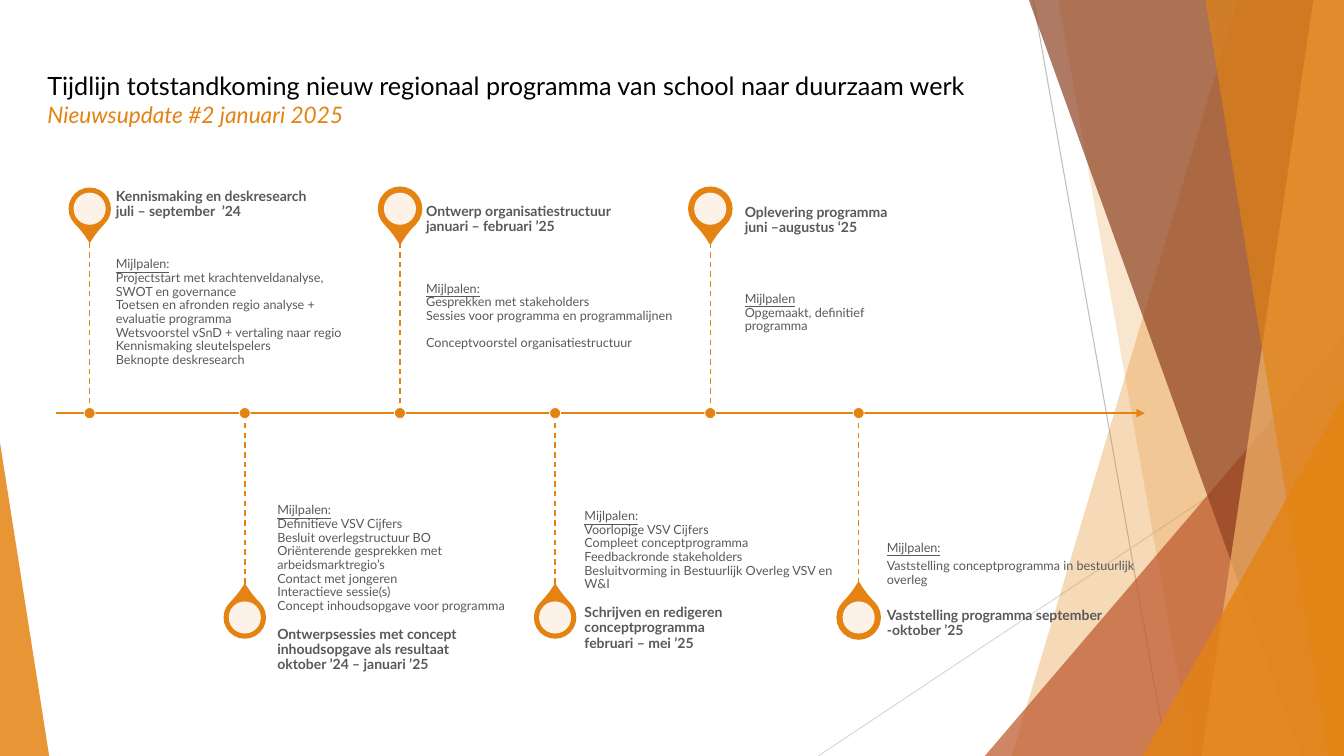
from dataclasses import dataclass

from lxml.etree import SubElement
from pptx import Presentation
from pptx.dml.color import RGBColor
from pptx.enum.dml import MSO_LINE
from pptx.enum.shapes import MSO_CONNECTOR, MSO_SHAPE
from pptx.enum.text import MSO_ANCHOR, PP_ALIGN
from pptx.oxml.ns import qn
from pptx.slide import Slide
from pptx.util import Cm, Pt

COLORS = {
    "orange": "E48312", "rust": "BD582C", "brown": "8E4221", "apricot": "F3B56C",
    "white": "FFFFFF", "black": "000000", "text": "595959",
    "gray": "BFBFBF", "light gray": "D9D9D9",
}
WIDTH, HEIGHT = 33.87, 19.05
AXIS_Y = 10.41
FIRST_X, STEP = 2.26, 3.91
STEM, PIN_OFFSET = 4.36, 5.15
HEADING_H, LIST_H, LIST_GAP = 1.55, 3.6, 0.15


def rgb(name):
    return RGBColor.from_string(COLORS[name])


@dataclass
class TimelineSlide:
    slide: Slide
    font: str = "Lato"

    def paint(self, shape, color, alpha=100, outline=None, weight=1.5):
        shape.shadow.inherit = False
        shape.fill.solid()
        shape.fill.fore_color.rgb = rgb(color)
        if alpha < 100:
            tint = shape.element.spPr.find(qn("a:solidFill"))[0]
            SubElement(tint, qn("a:alpha"), val=str(alpha * 1000))
        if outline:
            shape.line.color.rgb = rgb(outline)
            shape.line.width = Pt(weight)
        else:
            shape.line.fill.background()

    def shape(self, kind, left, top, width, height, color, adj=None, rotation=0, **look):
        figure = self.slide.shapes.add_shape(kind, Cm(left), Cm(top), Cm(width), Cm(height))
        if adj is not None:
            figure.adjustments[0] = adj
        figure.rotation = rotation
        self.paint(figure, color, **look)

    def centered(self, kind, x, y, size, color, **look):
        self.shape(kind, x - size / 2, y - size / 2, size, size, color, **look)

    def ribbon(self, top_x, bottom_x, color, alpha):
        """Fill the slide height from a slanted left edge to the right border."""
        outline = self.slide.shapes.build_freeform(Cm(top_x), 0)
        corners = [(WIDTH, 0), (WIDTH, HEIGHT), (bottom_x, HEIGHT)]
        outline.add_line_segments([(Cm(x), Cm(y)) for x, y in corners], close=True)
        self.paint(outline.convert_to_shape(), color, alpha)

    def line(self, start, end, color, weight, dashed=False, arrow=False):
        ends = [Cm(value) for value in (*start, *end)]
        stroke = self.slide.shapes.add_connector(MSO_CONNECTOR.STRAIGHT, *ends)
        stroke.line.color.rgb = rgb(color)
        stroke.line.width = Pt(weight)
        if dashed:
            stroke.line.dash_style = MSO_LINE.DASH
        properties = stroke.element.spPr
        if arrow:
            SubElement(properties.find(qn("a:ln")), qn("a:tailEnd"), type="triangle")
        SubElement(properties, qn("a:effectLst"))

    def styled_run(self, paragraph, text, size, color, bold=None, italic=None, underline=None):
        run = paragraph.add_run()
        run.text = text
        run.font.name = self.font
        run.font.size = Pt(size)
        run.font.color.rgb = rgb(color)
        run.font.bold, run.font.italic, run.font.underline = bold, italic, underline

    def title(self, heading, subtitle):
        title = self.slide.shapes.title
        title.left, title.top, title.width, title.height = Cm(0.94), Cm(1.65), Cm(25.15), Cm(2.1)
        frame = title.text_frame
        frame.word_wrap = True
        frame.vertical_anchor = MSO_ANCHOR.TOP
        self.styled_run(frame.paragraphs[0], heading, 18, "black")
        self.styled_run(frame.add_paragraph(), subtitle, 16.2, "orange", italic=True)
        for paragraph in frame.paragraphs:
            paragraph.alignment = PP_ALIGN.LEFT
            paragraph.space_before = Pt(0)

    def text(self, left, top, width, height, anchor, lines, size, right=0, bottom=0,
             underline_first=False, gaps=None, bold=None):
        """Add one paragraph per line; gaps maps a line index to its space before."""
        box = self.slide.shapes.add_textbox(Cm(left), Cm(top), Cm(width), Cm(height))
        frame = box.text_frame
        frame.word_wrap = True
        frame.vertical_anchor = anchor
        frame.margin_left = frame.margin_top = 0
        frame.margin_right, frame.margin_bottom = Cm(right), Cm(bottom)
        for index, line in enumerate(lines):
            paragraph = frame.add_paragraph() if index else frame.paragraphs[0]
            paragraph.line_spacing = 0.9
            paragraph.space_before = Pt((gaps or {}).get(index, 0))
            self.styled_run(paragraph, line, size, "text", bold=bold,
                            underline=underline_first and index == 0)

    def marker(self, x, above, outlined):
        side = -1 if above else 1
        pin_y = AXIS_Y + side * PIN_OFFSET
        self.centered(MSO_SHAPE.TEAR, x, pin_y, 1.07, "orange", adj=1.15,
                      rotation=135 if above else 315, outline="orange" if outlined else None)
        self.centered(MSO_SHAPE.OVAL, x, pin_y, 0.81, "white", alpha=90)
        self.line((x, AXIS_Y), (x, AXIS_Y + side * STEM), "orange", 1, dashed=True)
        self.centered(MSO_SHAPE.OVAL, x, AXIS_Y, 0.28, "orange", outline="white", weight=0.5)

    def phase(self, x, above, outlined, left, width, heading_top, heading, milestones,
              list_top=None, gaps=None):
        self.marker(x, above, outlined)
        self.text(left, heading_top, width, HEADING_H, MSO_ANCHOR.MIDDLE, heading, 10,
                  right=0.18, bold=True)
        if above:
            top, anchor = list_top, MSO_ANCHOR.TOP
        else:
            top, anchor = heading_top - LIST_H, MSO_ANCHOR.BOTTOM
        self.text(left, top, width, LIST_H, anchor, milestones, 9,
                  bottom=LIST_GAP, underline_first=True, gaps=gaps)


PHASES = [
    dict(outlined=False, left=2.92, width=5.84, heading_top=4.37, list_top=6.5,
         heading=["Kennismaking en deskresearch", "juli – september  ’24"],
         milestones=["Mijlpalen:", "Projectstart met krachtenveldanalyse, SWOT en governance",
                     "Toetsen en afronden regio analyse + evaluatie programma",
                     "Wetsvoorstel vSnD + vertaling naar regio",
                     "Kennismaking sleutelspelers", "Beknopte deskresearch"]),
    dict(outlined=False, left=6.99, width=6.38, heading_top=15.6,
         heading=["Ontwerpsessies met concept inhoudsopgave als resultaat",
                  "oktober ’24 – januari ’25"],
         milestones=["Mijlpalen:", "Definitieve VSV Cijfers", "Besluit overlegstructuur BO",
                     "Oriënterende gesprekken met arbeidsmarktregio’s",
                     "Contact met jongeren", "Interactieve sessie(s)",
                     "Concept inhoudsopgave voor programma"]),
    dict(outlined=True, left=10.74, width=6.38, heading_top=4.75, list_top=7.11,
         heading=["Ontwerp organisatiestructuur", "januari – februari ’25"],
         milestones=["Mijlpalen:", "Gesprekken met stakeholders",
                     "Sessies voor programma en programmalijnen",
                     "Conceptvoorstel organisatiestructuur"], gaps={3: 9.75}),
    dict(outlined=False, left=14.73, width=6.38, heading_top=15.06,
         heading=["Schrijven en redigeren conceptprogramma", "februari – mei ’25"],
         milestones=["Mijlpalen:", "Voorlopige VSV Cijfers", "Compleet conceptprogramma",
                     "Feedbackronde stakeholders",
                     "Besluitvorming in Bestuurlijk Overleg VSV en W&I"]),
    dict(outlined=True, left=18.77, width=4.47, heading_top=4.78, list_top=7.37,
         heading=["Oplevering programma", "juni –augustus ‘25"],
         milestones=["Mijlpalen", "Opgemaakt, definitief programma"]),
    dict(outlined=True, left=22.35, width=6.38, heading_top=14.94,
         heading=["Vaststelling programma september -oktober ’25"],
         milestones=["Mijlpalen:", "Vaststelling conceptprogramma in bestuurlijk overleg"],
         gaps={1: 3.15}),
]


def draw_background(page):
    page.line((26.04, 0), (29.41, HEIGHT), "gray", 0.75)
    page.line((WIDTH, 10.24), (20.62, HEIGHT), "light gray", 0.75)
    triangle = MSO_SHAPE.ISOSCELES_TRIANGLE
    page.ribbon(31.19, 25.5, "orange", 30)
    page.ribbon(26.67, 30.05, "orange", 20)
    page.shape(triangle, 24.82, 8.46, 9.05, 10.59, "rust", adj=1, alpha=72)
    page.ribbon(25.93, 32.79, "brown", 70)
    page.ribbon(33.1, 30.28, "apricot", 70)
    page.ribbon(30.38, 33.48, "orange", 65)
    page.shape(triangle, 28.8, 9.98, 5.07, 9.07, "orange", adj=1, alpha=80)
    page.shape(triangle, 0, 11.15, 1.24, 7.9, "orange", adj=0, alpha=85)


def main():
    deck = Presentation()
    deck.slide_width, deck.slide_height = Cm(WIDTH), Cm(HEIGHT)
    page = TimelineSlide(deck.slides.add_slide(deck.slide_layouts[5]))
    draw_background(page)
    page.title("Tijdlijn totstandkoming nieuw regionaal programma van school naar duurzaam werk",
               "Nieuwsupdate #2 januari 2025")
    page.line((1.4, AXIS_Y), (28.85, AXIS_Y), "orange", 1.5, arrow=True)
    stops = [FIRST_X + STEP * index for index in range(len(PHASES) - 1)] + [21.64]
    for index, (x, phase) in enumerate(zip(stops, PHASES)):
        page.phase(x, index % 2 == 0, **phase)
    deck.save("out.pptx")


if __name__ == "__main__":
    main()
